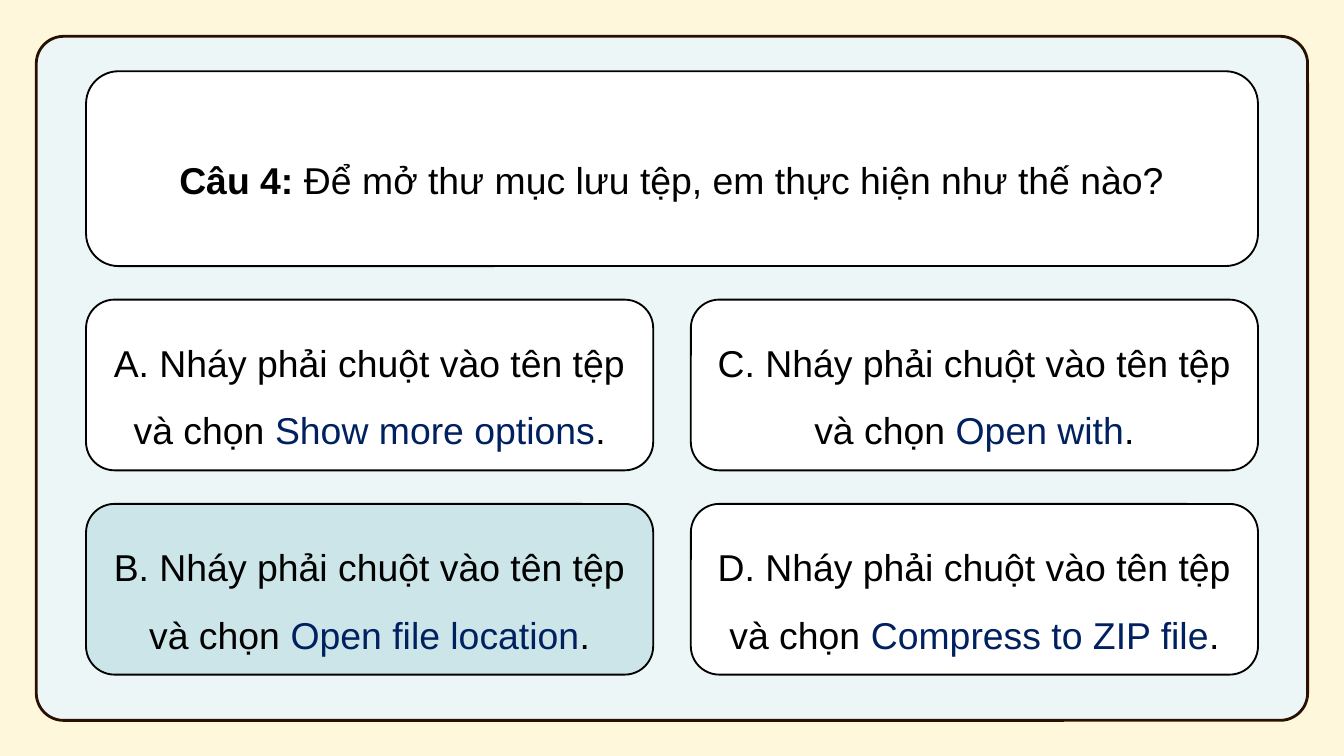
from pptx import Presentation
from pptx.dml.color import RGBColor
from pptx.enum.shapes import MSO_SHAPE
from pptx.enum.text import MSO_ANCHOR, PP_ALIGN
from pptx.util import Inches, Pt

ROUNDED = MSO_SHAPE.ROUNDED_RECTANGLE
MIDDLE = MSO_ANCHOR.MIDDLE
CENTER = PP_ALIGN.CENTER

CREAM = RGBColor(0xFF, 0xF7, 0xDC)
PALE_BLUE = RGBColor(0xED, 0xF6, 0xF7)
BROWN = RGBColor(0x28, 0x11, 0x01)
WHITE = RGBColor(0xFF, 0xFF, 0xFF)
BLACK = RGBColor(0x00, 0x00, 0x00)
NAVY = RGBColor(0x00, 0x20, 0x60)
TEAL = RGBColor(0xCB, 0xE5, 0xE8)

LEFT, ANSWER_TOP = 0.64, 2.23
ANSWER_W, ANSWER_H = 4.22, 1.27
COLUMN_STEP, ROW_STEP = 4.5, 1.52

ANSWERS = [
    ("A", "Show more options", 0, 0, WHITE),
    ("C", "Open with", 1, 0, WHITE),
    ("D", "Compress to ZIP file", 1, 1, WHITE),
    ("B", "Open file location", 0, 1, TEAL),
]


def add_box(s, x, y, w, h, fill=WHITE, line=BLACK, weight=1, radius=0.167):
    sp = s.shapes.add_shape(ROUNDED, Inches(x), Inches(y), Inches(w), Inches(h))
    sp.adjustments[0] = radius
    sp.shadow.inherit = False
    sp.fill.solid()
    sp.fill.fore_color.rgb = fill
    sp.line.color.rgb = line
    sp.line.width = Pt(weight)
    tf = sp.text_frame
    tf.word_wrap = True
    tf.vertical_anchor = MIDDLE
    tf.margin_left = tf.margin_right = Inches(0.07)
    tf.margin_top = tf.margin_bottom = Inches(0.04)
    p = tf.paragraphs[0]
    p.alignment = CENTER
    p.line_spacing = 1.5
    return sp


def add_text(sp, text, color=BLACK, bold=False, size=20, font="Arial"):
    r = sp.text_frame.paragraphs[0].add_run()
    r.text = text
    r.font.name = font
    r.font.size = Pt(size)
    r.font.bold = bold
    r.font.color.rgb = color


def add_question(s, label, question):
    sp = add_box(s, LEFT, 0.53, COLUMN_STEP + ANSWER_W, 1.45)
    add_text(sp, label, bold=True)
    add_text(sp, question)


def add_answer(s, letter, command, column, row, fill):
    x = LEFT + column * COLUMN_STEP
    y = ANSWER_TOP + row * ROW_STEP
    sp = add_box(s, x, y, ANSWER_W, ANSWER_H, fill=fill)
    add_text(sp, f"{letter}. Nháy phải chuột vào tên tệp và chọn ")
    add_text(sp, command, color=NAVY)
    add_text(sp, ".")


def main():
    prs = Presentation()
    prs.slide_width = Inches(10)
    prs.slide_height = Inches(10 * 9 / 16)
    s = prs.slides.add_slide(prs.slide_layouts[6])
    s.background.fill.solid()
    s.background.fill.fore_color.rgb = CREAM
    add_box(s, 0.27, 0.27, 9.46, 5.09, PALE_BLUE, BROWN, weight=1.5, radius=0.04)
    add_question(s, "Câu 4: ", "Để mở thư mục lưu tệp, em thực hiện như thế nào?")
    for answer in ANSWERS:
        add_answer(s, *answer)
    prs.save("out.pptx")


if __name__ == "__main__":
    main()
